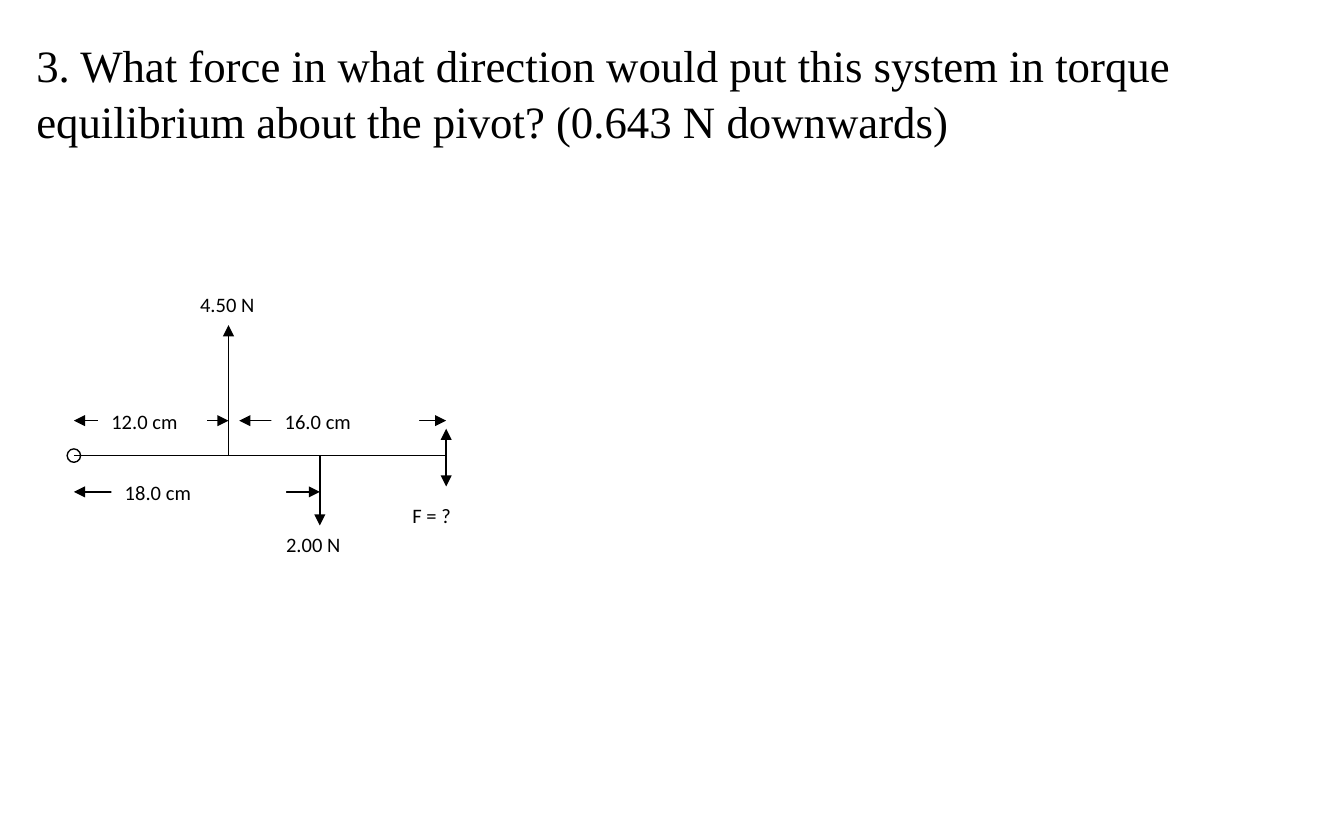
from dataclasses import dataclass

from lxml import etree
from pptx import Presentation
from pptx.dml.color import RGBColor
from pptx.enum.shapes import MSO_CONNECTOR, MSO_SHAPE
from pptx.enum.text import MSO_ANCHOR, MSO_AUTO_SIZE, PP_ALIGN
from pptx.oxml.ns import qn
from pptx.util import Inches, Pt

STRAIGHT = MSO_CONNECTOR.STRAIGHT
OVAL, RECT = MSO_SHAPE.OVAL, MSO_SHAPE.RECTANGLE
TOP, LEFT = MSO_ANCHOR.TOP, PP_ALIGN.LEFT
NO_FIT = MSO_AUTO_SIZE.NONE


@dataclass(frozen=True)
class Theme:
    ink: RGBColor = RGBColor(0, 0, 0)
    paper: RGBColor = RGBColor(255, 255, 255)
    title_font: str = "Times New Roman"
    label_font: str = "Calibri"
    title_size: Pt = Pt(24)
    label_size: Pt = Pt(11)
    line_width: Pt = Pt(0.75)


THEME = Theme()
LABEL_H = 0.29
LABEL_RISE = 0.14


def write(sp, text, font, size):
    tf = sp.text_frame
    tf.word_wrap = True
    tf.auto_size = NO_FIT
    tf.vertical_anchor = TOP
    p = tf.paragraphs[0]
    p.text = text
    p.alignment = LEFT
    p.font.name = font
    p.font.size = size
    p.font.color.rgb = THEME.ink
    return p


def add_line(slide, x1, y1, x2, y2, head=False, tail=False):
    cn = slide.shapes.add_connector(
        STRAIGHT, Inches(x1), Inches(y1), Inches(x2), Inches(y2))
    cn.line.color.rgb = THEME.ink
    cn.line.width = THEME.line_width
    ln = cn.line._get_or_add_ln()
    for tag, wanted in (("a:headEnd", head), ("a:tailEnd", tail)):
        if wanted:
            etree.SubElement(ln, qn(tag), type="triangle")
    etree.SubElement(cn._element.spPr, qn("a:effectLst"))


def add_label(slide, text, x, y, w, filled=False):
    box = Inches(x), Inches(y), Inches(w), Inches(LABEL_H)
    if filled:
        sp = slide.shapes.add_shape(RECT, *box)
        sp.shadow.inherit = False
        sp.fill.solid()
        sp.fill.fore_color.rgb = THEME.paper
        sp.line.fill.background()
    else:
        sp = slide.shapes.add_textbox(*box)
    p = write(sp, text, THEME.label_font, THEME.label_size)
    p.space_after = Pt(10)


def add_span(slide, text, x1, x2, y, label_x, label_w):
    add_line(slide, x1, y, x2, y, head=True, tail=True)
    add_label(slide, text, label_x, y - LABEL_RISE, label_w, filled=True)


def add_pivot(slide, x, y, size):
    sp = slide.shapes.add_shape(
        OVAL, Inches(x - size / 2), Inches(y - size / 2),
        Inches(size), Inches(size))
    sp.shadow.inherit = False
    sp.fill.solid()
    sp.fill.fore_color.rgb = THEME.paper
    sp.line.color.rgb = THEME.ink
    sp.line.width = THEME.line_width


def question(slide, x, y, w, h):
    sp = slide.shapes.title
    sp.left, sp.top, sp.width, sp.height = map(Inches, (x, y, w, h))
    p = write(sp, "3. What force in what direction would put this system in "
              "torque equilibrium about the pivot? (0.643 N downwards)",
              THEME.title_font, THEME.title_size)
    p.line_spacing = 1.05


def torque_diagram(slide, x, y, w, h):
    pivot, up, down, end = x + 0.05, x + 1.2, x + 1.88, x + 2.82
    beam = y + 1.27
    above, below = beam - 0.26, beam + 0.27
    bottom = y + h - LABEL_H
    label_w = 0.69

    add_pivot(slide, pivot, beam, 0.1)
    add_line(slide, pivot, beam, end, beam)
    add_line(slide, up, beam, up, y + 0.3, tail=True)
    add_line(slide, end, beam - 0.2, end, beam + 0.23, head=True, tail=True)

    add_span(slide, "12.0 cm", pivot, up, above, x + 0.23, 0.81)
    add_span(slide, "16.0 cm", up + 0.08, end, above, x + 1.52, 1.1)
    add_span(slide, "18.0 cm", pivot, down, below, x + 0.33, 1.3)
    add_line(slide, down, beam, down, bottom, tail=True)

    add_label(slide, "4.50 N", x + 0.89, y, label_w)
    add_label(slide, "F = ?", x + w - label_w, beam + 0.3, label_w)
    add_label(slide, "2.00 N", x + 1.53, bottom, label_w)


def main():
    prs = Presentation()
    prs.slide_width, prs.slide_height = Inches(10), Inches(6.25)
    slide = prs.slides.add_slide(prs.slide_layouts[5])
    question(slide, 0.17, 0.21, 9.67, 1.31)
    torque_diagram(slide, 0.5, 2.12, 3.16, 2.08)
    prs.save("out.pptx")


if __name__ == "__main__":
    main()
